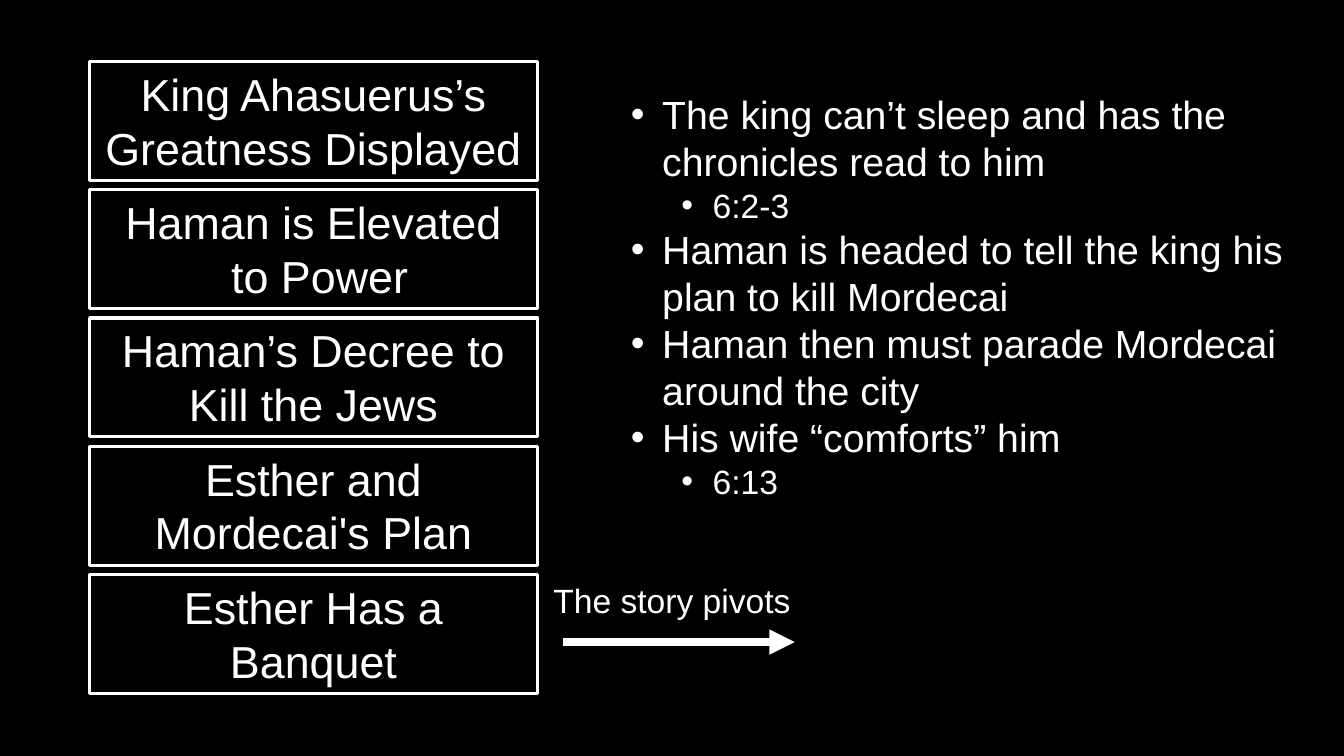
from lxml import etree
from pptx import Presentation
from pptx import util as u
from pptx.dml.color import RGBColor
from pptx.enum import shapes, text
from pptx.oxml.ns import qn

COLORS = {"background": "000000", "foreground": "FFFFFF"}
WIDTH, HEIGHT = u.Inches(13.33), u.Inches(7.5)
COLUMNS, ROWS = 15, 15

EVENTS = [
    ["King Ahasuerus’s Greatness Displayed"],
    ["Haman is Elevated", " to Power"],
    ["Haman’s Decree to Kill the Jews"],
    ["Esther and Mordecai's Plan"],
    ["Esther Has a Banquet"],
]
PIVOT_POINTS = [
    (0, "The king can’t sleep and has the chronicles read to him"),
    (1, "6:2-3"),
    (0, "Haman is headed to tell the king his plan to kill Mordecai"),
    (0, "Haman then must parade Mordecai around the city"),
    (0, "His wife “comforts” him"),
    (1, "6:13"),
]


def color(name):
    """Return the named colour."""
    return RGBColor.from_string(COLORS[name])


def grid(column, row):
    """Turn a grid position or extent into slide lengths."""
    return int(WIDTH * column / COLUMNS), int(HEIGHT * row / ROWS)


def write(paragraph, words, size=24, align=None, font="Arial", ink="foreground"):
    """Write one formatted run into a paragraph."""
    run = paragraph.add_run()
    run.text = words
    run.font.size = u.Pt(size)
    run.font.name = font
    run.font.color.rgb = color(ink)
    paragraph.alignment = align


def add_bullet(paragraph, level):
    """Give a paragraph a hanging round bullet."""
    paragraph.level = level
    paragraph.space_before = u.Pt(0)
    properties = paragraph._p.get_or_add_pPr()
    properties.set("marL", str(u.Inches(0.31 + 0.5 * level)))
    properties.set("indent", str(u.Inches(-0.31)))
    etree.SubElement(properties, qn("a:buFont"), typeface="Arial")
    etree.SubElement(properties, qn("a:buChar"), char="•")


class SlideBuilder:
    """Hold the slide and its style, and add each kind of element."""

    def __init__(self, presentation):
        """Start a dark slide without a title."""
        self.slide = presentation.slides.add_slide(presentation.slide_layouts[1])
        fill = self.slide.background.fill
        fill.solid()
        fill.fore_color.rgb = color("background")
        title = self.slide.shapes.title._element
        title.getparent().remove(title)

    def frame(self, shape, wrap=True, anchor=text.MSO_ANCHOR.TOP):
        """Set up and return a shape's text frame."""
        frame = shape.text_frame
        frame.word_wrap = wrap
        frame.vertical_anchor = anchor
        frame.auto_size = text.MSO_AUTO_SIZE.SHAPE_TO_FIT_TEXT
        return frame

    def fill_frame(self, frame, lines, **style):
        """Write lines as consecutive paragraphs and return these."""
        for index, words in enumerate(lines):
            paragraph = frame.paragraphs[0] if index == 0 else frame.add_paragraph()
            write(paragraph, words, **style)
        return frame.paragraphs

    def box(self, lines, column, row, columns, rows):
        """Add an outlined box with centred text."""
        shape = self.slide.shapes.add_shape(
            shapes.MSO_SHAPE.RECTANGLE, *grid(column, row), *grid(columns, rows))
        shape.shadow.inherit = False
        shape.fill.background()
        shape.line.color.rgb = color("foreground")
        shape.line.width = u.Pt(2.25)
        self.fill_frame(self.frame(shape), lines, size=32, align=text.PP_ALIGN.CENTER)

    def bullets(self, points, column, row, columns, rows):
        """Fill the body placeholder with a two-level list."""
        body = self.slide.placeholders[1]
        body.left, body.top = grid(column, row)
        body.width, body.height = grid(columns, rows)
        frame = self.frame(body)
        for index, (level, words) in enumerate(points):
            paragraph = frame.paragraphs[0] if index == 0 else frame.add_paragraph()
            add_bullet(paragraph, level)
            write(paragraph, words, size=28 - 4 * level)

    def label(self, words, column, row, columns, rows):
        """Add a centred one-line label."""
        shape = self.slide.shapes.add_textbox(*grid(column, row), *grid(columns, rows))
        self.fill_frame(self.frame(shape, wrap=False), [words],
                        align=text.PP_ALIGN.CENTER)

    def arrow(self, column, row, columns):
        """Add a thick arrow pointing right."""
        line = self.slide.shapes.add_connector(
            shapes.MSO_CONNECTOR.STRAIGHT, *grid(column, row), *grid(column + columns, row))
        line.line.color.rgb = color("foreground")
        line.line.width = u.Pt(6)
        etree.SubElement(line.line._get_or_add_ln(), qn("a:tailEnd"), type="triangle")
        etree.SubElement(line._element.spPr, qn("a:effectLst"))


def main():
    """Build and save the presentation."""
    presentation = Presentation()
    presentation.slide_width, presentation.slide_height = WIDTH, HEIGHT
    builder = SlideBuilder(presentation)
    for index, lines in enumerate(EVENTS):
        builder.box(lines, column=1, row=1.22 + 2.545 * index, columns=5, rows=2.36)
    builder.bullets(PIVOT_POINTS, column=6.93, row=1.7, columns=7.83, rows=8.54)
    builder.arrow(column=6.28, row=12.74, columns=2.59)
    builder.label("The story pivots", column=6.05, row=11.4, columns=2.9, rows=1)
    presentation.save("out.pptx")


main()
